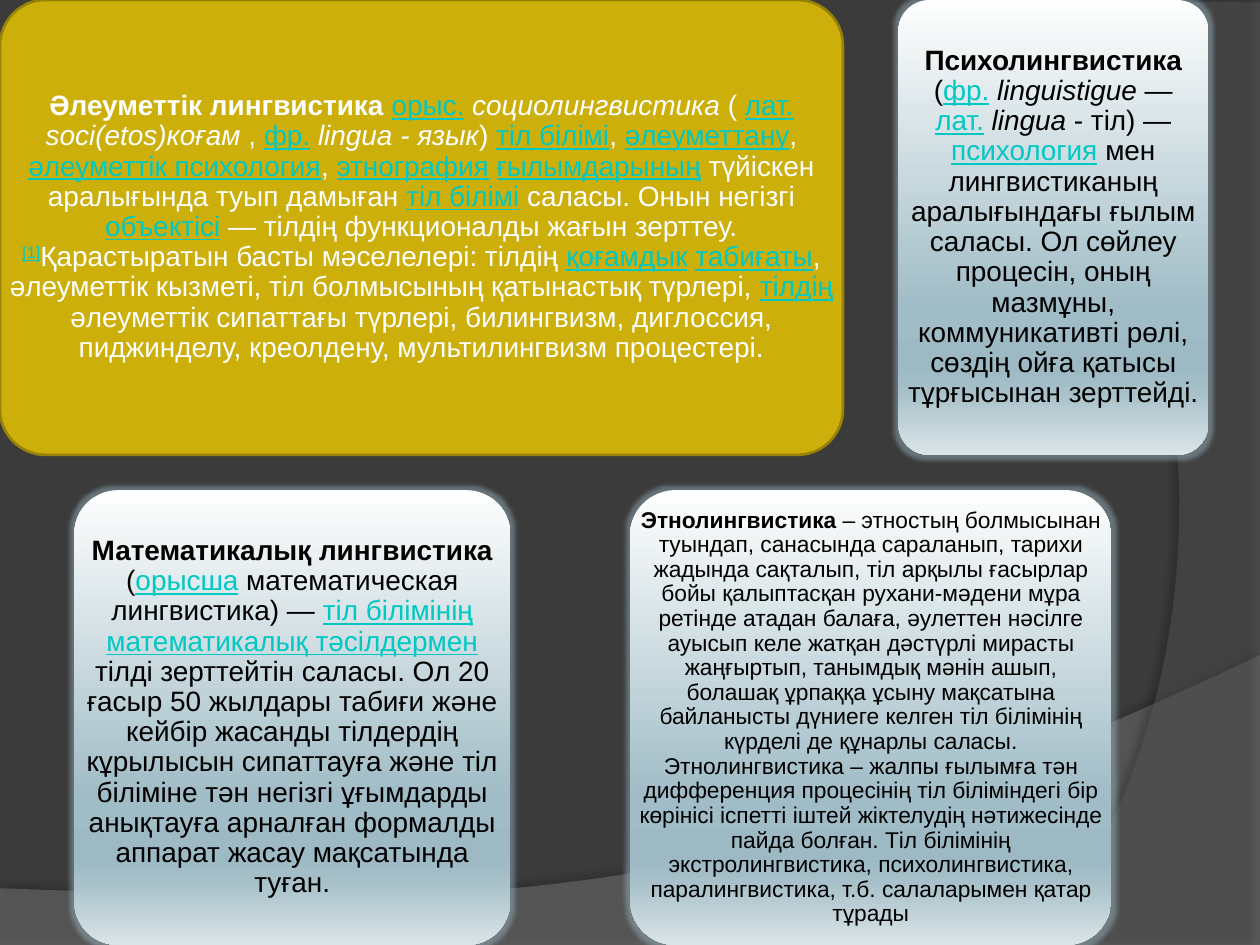
"""Builds a slide with four cards on branches of linguistics."""
from lxml import etree
from pptx import Presentation
from pptx import util as u
from pptx.dml.color import RGBColor
from pptx.enum import shapes, text
from pptx.oxml.ns import qn

COLORS = {
    "back": "3B3B3B", "wave": "7F7F7F", "arc": "5E5E5E", "shadow": "000000",
    "gold": "CCAF0A", "edge": "978107", "light": "FFFFFF", "dark": "000000",
    "link": "00C8C3", "glow": "9CB9C4",
}
STEEL = [(0, "FEFEFE"), (68, "A0BCC6"), (81, "9CB9C4"), (86, "A7C0C9"), (100, "DAE4E7")]
COLUMNS, ROWS = 10, 7.5
CARD_ROWS = 3.61
LOWER = ROWS - CARD_ROWS

SOCIO = (
    "*Әлеуметтік лингвистика |_орыс.| |/социолингвистика| ( |_лат.| |/soci(etos)коғам| , |_фр.| "
    "|/lingua - язык|) |_тіл білімі|, |_әлеуметтану|, |_әлеуметтік психология|, |_этнография| "
    "|_ғылымдарының| түйіскен аралығында туып дамыған |_тіл білімі| саласы. Онын негізгі "
    "|_объектісі| — тілдің функционалды жағын зерттеу. |^[1]|Қарастыратын басты мәселелері: тілдің "
    "|_қоғамдык| |_табиғаты|, әлеуметтік кызметі, тіл болмысының қатынастық түрлері, |_тілдің| "
    "әлеуметтік сипаттағы түрлері, билингвизм, диглоссия, пиджинделу, креолдену, мультилингвизм "
    "процестері.")
MATH = (
    "*Математикалық лингвистика| (|_орысша| математическая лингвистика) — |_тіл білімінің| "
    "|_математикалық тәсілдермен| тілді зерттейтін саласы. Ол 20 ғасыр 50 жылдары табиғи және "
    "кейбір жасанды тілдердің кұрылысын сипаттауға және тіл біліміне тән негізгі ұғымдарды "
    "анықтауға арналған формалды аппарат жасау мақсатында туған.")
ETHNO = (
    "*Этнолингвистика| – этностың болмысынан туындап, санасында сараланып, тарихи жадында сақталып, "
    "тіл арқылы ғасырлар бойы қалыптасқан рухани-мәдени мұра ретінде атадан балаға, әулеттен нәсілге "
    "ауысып келе жатқан дәстүрлі мирасты жаңғыртып, танымдық мәнін ашып, болашақ ұрпаққа ұсыну "
    "мақсатына байланысты дүниеге келген тіл білімінің күрделі де құнарлы саласы. Этнолингвистика – "
    "жалпы ғылымға тән дифференция процесінің тіл біліміндегі бір көрінісі іспетті іштей жіктелудің "
    "нәтижесінде пайда болған. Тіл білімінің экстролингвистика, психолингвистика, паралингвистика, "
    "т.б. салаларымен қатар тұрады")
PSYCHO = (
    "*Психолингвистика| (|_фр.| |/linguistigue| — |_лат.| |/lingua| - тіл) — |_психология| мен "
    "лингвистиканың аралығындағы ғылым саласы. Ол сөйлеу процесін, оның мазмұны, коммуникативті рөлі, "
    "сөздің ойға қатысы тұрғысынан зерттейді.")


def rgb(name):
    return RGBColor.from_string(COLORS[name])


def bezier(p0, p1, p2, p3, steps=40):
    """Points along a cubic curve, its start left out."""
    for k in range(1, steps + 1):
        t = k / steps
        weights = ((1 - t) ** 3, 3 * t * (1 - t) ** 2, 3 * t * t * (1 - t), t ** 3)
        yield tuple(sum(w * p[axis] for w, p in zip(weights, (p0, p1, p2, p3))) for axis in (0, 1))


def add_color(parent, color, alpha=None):
    clr = etree.SubElement(parent, qn("a:srgbClr"), val=color)
    if alpha is not None:
        etree.SubElement(clr, qn("a:alpha"), val=str(alpha * 1000))


class Deck:
    """Style and current slide, measured in grid columns and rows."""

    font = "Arial"

    def __init__(self):
        self.prs = Presentation()
        self.prs.slide_width, self.prs.slide_height = u.Inches(10), u.Inches(7.5)
        self.s = self.prs.slides.add_slide(self.prs.slide_layouts[6])
        fill = self.s.background.fill
        fill.solid()
        fill.fore_color.rgb = rgb("back")

    def place(self, col, row):
        return (round(self.prs.slide_width * col / COLUMNS),
                round(self.prs.slide_height * row / ROWS))

    def effect(self, sp, tag, color, alpha, **attrs):
        sp.shadow.inherit = False
        effects = sp._element.spPr.find(qn("a:effectLst"))
        add_color(etree.SubElement(effects, qn(tag), **attrs), COLORS[color], alpha)

    def backdrop(self, points, color, alpha, shade, distance, angle):
        start, *rest = [self.place(*point) for point in points]
        builder = self.s.shapes.build_freeform(*start)
        builder.add_line_segments(rest, close=True)
        sp = builder.convert_to_shape()
        sp.fill.solid()
        sp.fill.fore_color.rgb = rgb(color)
        clr = sp._element.spPr.find(qn("a:solidFill"))[0]
        etree.SubElement(clr, qn("a:alpha"), val=str(alpha * 1000))
        sp.line.fill.background()
        self.effect(sp, "a:outerShdw", "shadow", shade, blurRad=str(u.Pt(4)),
                    dist=str(u.Pt(distance)), dir=str(angle * 60000), rotWithShape="0")

    def card(self, col, row, cols, words, size=16, pad=0.07, gold=False):
        box = self.place(col, row) + self.place(cols, CARD_ROWS)
        sp = self.s.shapes.add_shape(shapes.MSO_SHAPE.ROUNDED_RECTANGLE, *box)
        sp.adjustments[0] = 0.1
        if gold:
            sp.shadow.inherit = False
            sp.fill.solid()
            sp.fill.fore_color.rgb = rgb("gold")
            sp.line.color.rgb = rgb("edge")
            sp.line.width = u.Pt(1.5)
        else:
            self.steel(sp)
        self.words(box, words, size, pad, "light" if gold else "dark")

    def steel(self, sp):
        sp.fill.gradient()
        sp.fill.gradient_angle = 270
        stops = sp._element.spPr.find(qn("a:gradFill")).find(qn("a:gsLst"))
        for stop in list(stops):
            stops.remove(stop)
        for position, color in STEEL:
            add_color(etree.SubElement(stops, qn("a:gs"), pos=str(position * 1000)), color)
        sp.line.fill.background()
        self.effect(sp, "a:glow", "glow", 45, rad=str(u.Pt(5)))

    def words(self, box, words, size, pad, color):
        tf = self.s.shapes.add_textbox(*box).text_frame
        tf.word_wrap = True
        tf.vertical_anchor = text.MSO_ANCHOR.MIDDLE
        tf.margin_left = tf.margin_right = tf.margin_top = tf.margin_bottom = u.Inches(pad)
        p = tf.paragraphs[0]
        p.alignment = text.PP_ALIGN.CENTER
        p.line_spacing = 0.9
        for piece in words.split("|"):
            mark = piece[0] if piece[0] in "*/_^" else ""
            r = p.add_run()
            r.text = piece[len(mark):]
            r.font.name, r.font.size = self.font, u.Pt(size)
            r.font.bold, r.font.italic = mark == "*", mark == "/"
            linked = mark in ("_", "^")
            r.font.underline = linked
            r.font.color.rgb = rgb("link" if linked else color)
            if mark == "^":
                r._r.get_or_add_rPr().set("baseline", "30000")


def main():
    deck = Deck()
    wave = [(0, 7.05), (0, ROWS), (COLUMNS, ROWS), (COLUMNS, 5.2),
            *bezier((10, 5.2), (5.59, 7.29), (3.91, 7.19), (0, 7.05))]
    arc = [(COLUMNS, 0.02), (COLUMNS, ROWS), (8.21, ROWS),
           *bezier((8.21, 7.5), (9.35, 6.19), (10.18, 3), (8, 0))]
    deck.backdrop(wave, "wave", 45, shade=35, distance=3.5, angle=270)
    deck.backdrop(arc, "arc", 40, shade=45, distance=4, angle=180)
    deck.card(0, 0, 6.69, SOCIO, gold=True)
    deck.card(0.59, LOWER, 3.46, MATH)
    deck.card(5, LOWER, 3.82, ETHNO, size=13, pad=0.05)
    deck.card(7.13, 0, 2.46, PSYCHO)
    deck.prs.save("out.pptx")


if __name__ == "__main__":
    main()
